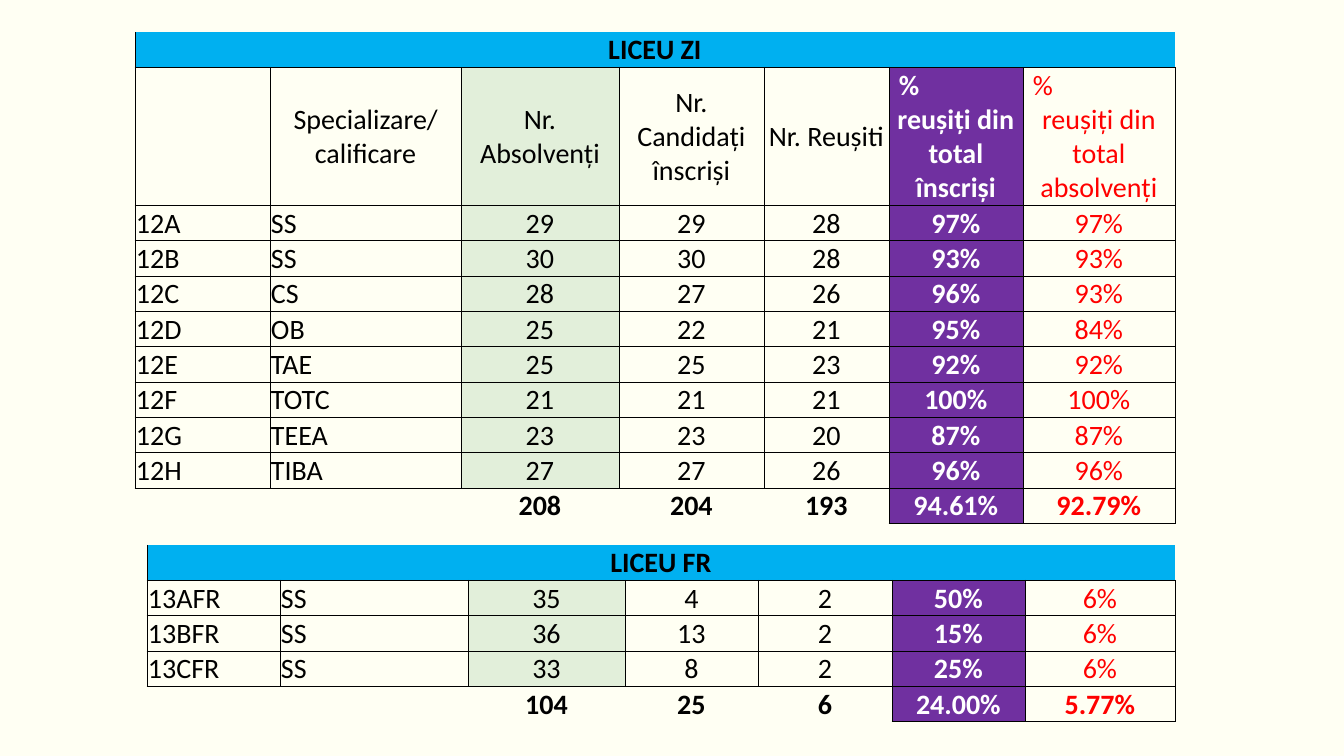
from lxml.etree import SubElement
from pptx import Presentation
from pptx.dml.color import RGBColor as RGB
from pptx.enum.text import MSO_ANCHOR as ANCHOR, PP_ALIGN as ALIGN
from pptx.oxml.ns import qn
from pptx.util import Emu, Pt

CREAM = RGB(0xFF, 0xFF, 0xF3)
BLUE = RGB(0x00, 0xB0, 0xF0)
GREEN = RGB(0xE2, 0xEF, 0xDA)
PURPLE = RGB(0x70, 0x30, 0xA0)
WHITE = RGB(0xFF, 0xFF, 0xFF)
RED = RGB(0xFF, 0x00, 0x00)
BLACK = RGB(0x00, 0x00, 0x00)

CLASS_COLS, GRADUATES, PASSED, OF_ENTERED, OF_GRADUATES = (0, 1), 2, 4, 5, 6
ROW_H, HEADER_H = 35, 137

HEADER = ["", "Specializare/calificare", "Nr. Absolvenți",
          "Nr. Candidați înscriși", "Nr. Reușiti",
          "%\nreușiți din total înscriși", "%\nreușiți din total absolvenți"]
DAY_ROWS = [
    ["12A", "SS", "29", "29", "28", "97%", "97%"],
    ["12B", "SS", "30", "30", "28", "93%", "93%"],
    ["12C", "CS", "28", "27", "26", "96%", "93%"],
    ["12D", "OB", "25", "22", "21", "95%", "84%"],
    ["12E", "TAE", "25", "25", "23", "92%", "92%"],
    ["12F", "TOTC", "21", "21", "21", "100%", "100%"],
    ["12G", "TEEA", "23", "23", "20", "87%", "87%"],
    ["12H", "TIBA", "27", "27", "26", "96%", "96%"],
]
DAY_TOTALS = ["", "", "208", "204", "193", "94.61%", "92.79%"]
FR_ROWS = [
    ["13AFR", "SS", "35", "4", "2", "50%", "6%"],
    ["13BFR", "SS", "36", "13", "2", "15%", "6%"],
    ["13CFR", "SS", "33", "8", "2", "25%", "6%"],
]
FR_TOTALS = ["", "", "104", "25", "6", "24.00%", "5.77%"]


def px(n):
    return Emu(round(n * 914400 / 100.8))


class Deck:
    font, size, line = "Calibri", Pt(20), Pt(0.5)

    def __init__(self):
        self.prs = Presentation()
        self.prs.slide_width, self.prs.slide_height = px(1344), px(756)

    def slide(self, color):
        self.s = self.prs.slides.add_slide(self.prs.slide_layouts[6])
        self.s.background.fill.solid()
        self.s.background.fill.fore_color.rgb = color

    def borders(self, cell, sides):
        tc_pr = cell._tc.get_or_add_tcPr()
        for side in "LRTB":
            ln = SubElement(tc_pr, qn(f"a:ln{side}"), w=str(self.line))
            if side in sides:
                fill = SubElement(ln, qn("a:solidFill"))
                SubElement(fill, qn("a:srgbClr"), val=str(BLACK))
            else:
                SubElement(ln, qn("a:noFill"))

    def cell(self, cell, text, sides="LRTB", fill=None, color=BLACK,
             bold=False, align=ALIGN.CENTER, anchor=ANCHOR.MIDDLE):
        self.borders(cell, sides)
        cell.margin_left = cell.margin_right = cell.margin_top = px(1)
        cell.margin_bottom = 0
        cell.vertical_anchor = anchor
        if fill is None:
            cell.fill.background()
        else:
            cell.fill.solid()
            cell.fill.fore_color.rgb = fill
        if not text:
            return
        tf = cell.text_frame
        lines = text.split("\n")
        for i, words in enumerate(lines):
            p = tf.paragraphs[0] if i == 0 else tf.add_paragraph()
            p.alignment = align
            if i < len(lines) - 1:
                p.alignment = ALIGN.LEFT
                p._p.get_or_add_pPr().set("marL", str(px(9)))
            r = p.add_run()
            r.text = words
            r.font.name, r.font.size = self.font, self.size
            r.font.bold, r.font.color.rgb = bold, color

    def body_cell(self, cell, col, text, total, header):
        look = {"bold": total}
        if col in CLASS_COLS and not header:
            look.update(align=ALIGN.LEFT, anchor=ANCHOR.BOTTOM)
        if col == GRADUATES and not total:
            look.update(fill=GREEN)
        if col == OF_ENTERED:
            look.update(fill=PURPLE, color=WHITE, bold=True)
        if col == OF_GRADUATES:
            look.update(color=RED)
        if total and col <= PASSED:
            look.update(sides="TR" if col == PASSED else "T")
        self.cell(cell, text, **look)

    def results(self, x, y, widths, title, rows, totals, header=None):
        body = ([header] if header else []) + rows + [totals]
        heights = [ROW_H] + [HEADER_H if row is header else ROW_H for row in body]
        table = self.s.shapes.add_table(
            len(heights), len(widths), px(x), px(y),
            px(sum(widths)), px(sum(heights))).table
        table.first_row = table.horz_banding = False
        for col, width in zip(table.columns, widths):
            col.width = px(width)
        for row, height in zip(table.rows, heights):
            row.height = px(height)
        for col in range(len(widths)):
            self.cell(table.cell(0, col), "" if col else title,
                      sides="B" if col else "LB", fill=BLUE, bold=True,
                      anchor=ANCHOR.BOTTOM)
        table.cell(0, 0).merge(table.cell(0, len(widths) - 1))
        for i, row in enumerate(body, 1):
            for col, text in enumerate(row):
                self.body_cell(table.cell(i, col), col, text,
                               row is totals, row is header)


def main():
    deck = Deck()
    deck.slide(CREAM)
    deck.results(135, 32, [135, 191, 158, 145, 125, 134, 152],
                 "LICEU ZI", DAY_ROWS, DAY_TOTALS, HEADER)
    deck.results(147, 545, [133, 188, 157, 133, 134, 133, 150],
                 "LICEU FR", FR_ROWS, FR_TOTALS)
    deck.prs.save("out.pptx")


if __name__ == "__main__":
    main()
